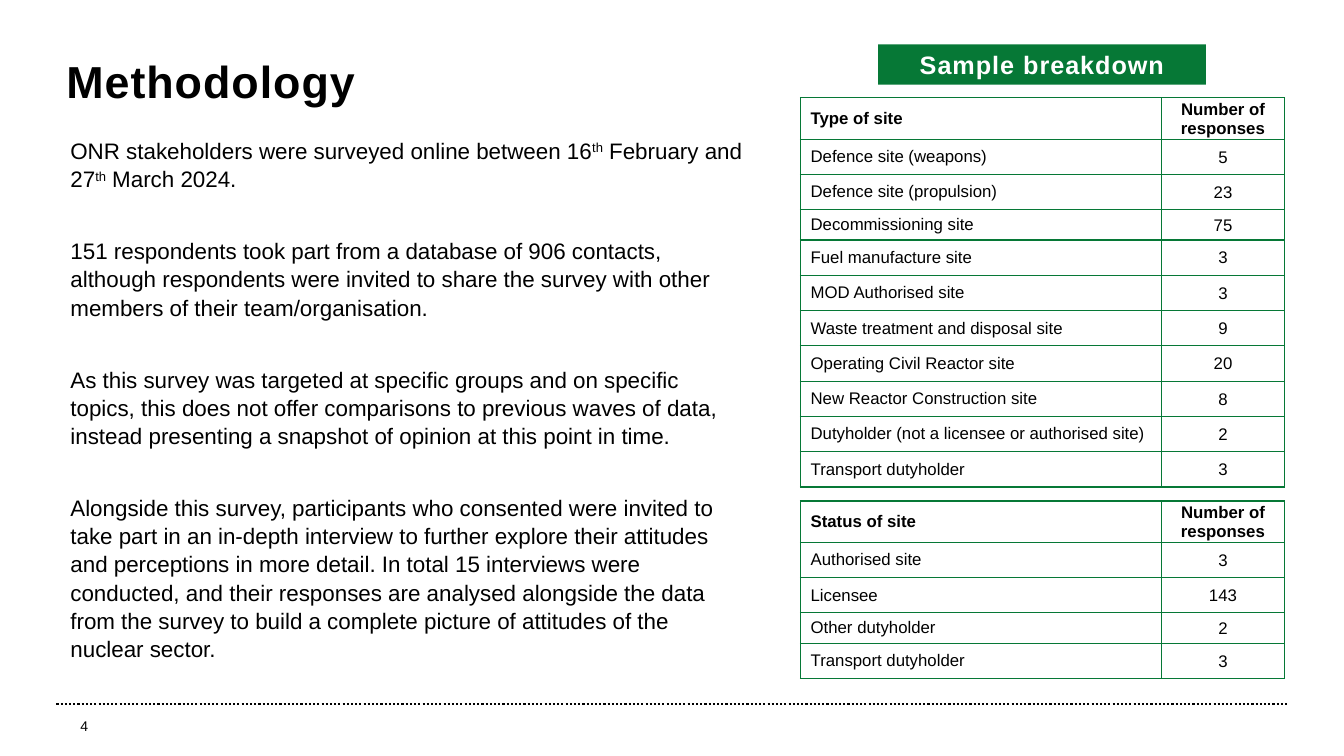
from lxml.etree import SubElement
from pptx import Presentation
from pptx.dml.color import RGBColor
from pptx.enum.dml import MSO_LINE
from pptx.enum.shapes import MSO_CONNECTOR, MSO_SHAPE
from pptx.enum.text import MSO_ANCHOR, PP_ALIGN
from pptx.oxml import parse_xml
from pptx.oxml.ns import nsdecls, qn
from pptx.util import Inches, Pt

GREEN, BLACK, WHITE = "067836", "000000", "FFFFFF"


def rgb(hex_value):
    return RGBColor.from_string(hex_value)


def add_run(paragraph, text, size, color=BLACK, bold=False, **attributes):
    """Append a formatted Arial run; attributes go onto its a:rPr element."""
    run = paragraph.add_run()
    run.text = text
    font_format = {"name": "Arial", "size": Pt(size), "bold": bold}
    for key, value in font_format.items():
        setattr(run.font, key, value)
    run.font.color.rgb = rgb(color)
    for key, value in attributes.items():
        run.font._element.set(key, value)


presentation = Presentation()
presentation.slide_width = Inches(13.33)
presentation.slide_height = Inches(7.5)
slide = presentation.slides.add_slide(presentation.slide_layouts[6])
shapes = slide.shapes

# Footer rule
footer_rule = shapes.add_connector(
    MSO_CONNECTOR.STRAIGHT, Inches(0.56), Inches(6.98), Inches(12.77), Inches(6.98))
footer_rule.line.color.rgb = rgb(BLACK)
footer_rule.line.width = Pt(1.5)
footer_rule.line.dash_style = MSO_LINE.ROUND_DOT
SubElement(footer_rule._element.spPr, qn("a:effectLst"))

# Title
title = shapes.add_textbox(Inches(0.56), Inches(0.43), Inches(8), Inches(0.74)).text_frame
title.word_wrap = True
title.vertical_anchor = MSO_ANCHOR.MIDDLE
add_run(title.paragraphs[0], "Methodology", 32, bold=True, spc="70")

# Method description: odd-numbered pieces of a paragraph are superscript
method_paragraphs = [
    ["ONR stakeholders were surveyed online between 16", "th", " February and 27", "th",
     " March 2024."],
    ["151 respondents took part from a database of 906 contacts, although respondents "
     "were invited to share the survey with other members of their team/organisation."],
    ["As this survey was targeted at specific groups and on specific topics, this does not "
     "offer comparisons to previous waves of data, instead presenting a snapshot of "
     "opinion at this point in time."],
    ["Alongside this survey, participants who consented were invited to take part in an "
     "in-depth interview to further explore their attitudes and perceptions in more detail. "
     "In total 15 interviews were conducted, and their responses are analysed alongside the "
     "data from the survey to build a complete picture of attitudes of the nuclear sector."],
]
method = shapes.add_textbox(Inches(0.6), Inches(1.3), Inches(6.88), Inches(5.27)).text_frame
method.word_wrap = True
for number, pieces in enumerate(method_paragraphs):
    paragraph = method.add_paragraph() if number else method.paragraphs[0]
    paragraph.line_spacing = 1.05
    paragraph.space_after = Pt(31.3)
    for position, piece in enumerate(pieces):
        add_run(paragraph, piece, 16, baseline="30000" if position % 2 else "0")

# Heading above the tables
sample_heading = shapes.add_shape(
    MSO_SHAPE.RECTANGLE, Inches(8.71), Inches(0.44), Inches(3.25), Inches(0.4))
sample_heading.shadow.inherit = False
sample_heading.fill.solid()
sample_heading.fill.fore_color.rgb = rgb(GREEN)
sample_heading.line.fill.background()
sample_heading.text_frame.vertical_anchor = MSO_ANCHOR.MIDDLE
sample_heading.text_frame.paragraphs[0].alignment = PP_ALIGN.CENTER
add_run(sample_heading.text_frame.paragraphs[0], "Sample breakdown", 18, WHITE, True, spc="70")

# Sample tables: top edge, index of the shorter row, rows
sample_tables = [
    (0.97, 3, [
        ("Type of site", "Number of responses"),
        ("Defence site (weapons)", "5"),
        ("Defence site (propulsion)", "23"),
        ("Decommissioning site", "75"),
        ("Fuel manufacture site", "3"),
        ("MOD Authorised site", "3"),
        ("Waste treatment and disposal site", "9"),
        ("Operating Civil Reactor site", "20"),
        ("New Reactor Construction site", "8"),
        ("Dutyholder (not a licensee or authorised site)", "2"),
        ("Transport dutyholder", "3"),
    ]),
    (4.97, 3, [
        ("Status of site", "Number of responses"),
        ("Authorised site", "3"),
        ("Licensee", "143"),
        ("Other dutyholder", "2"),
        ("Transport dutyholder", "3"),
    ]),
]
count_margins = {"margin_left": 0.01, "margin_right": 0.01, "margin_top": 0.01,
                 "margin_bottom": 0}
for top, short_row, records in sample_tables:
    heights = [0.35] * len(records)
    heights[0], heights[short_row] = 0.4, 0.3
    table = shapes.add_table(len(records), 2, Inches(7.94), Inches(top),
                             Inches(4.8), Inches(sum(heights))).table
    table.first_row = table.horz_banding = False
    table.columns[0].width, table.columns[1].width = Inches(3.58), Inches(1.22)
    for row, record in enumerate(records):
        table.rows[row].height = Inches(heights[row])
        for column, text in enumerate(record):
            cell = table.cell(row, column)
            cell.vertical_anchor = MSO_ANCHOR.MIDDLE
            cell.fill.background()
            cell_properties = cell._tc.get_or_add_tcPr()
            for index, side in enumerate("LRTB"):
                cell_properties.insert(index, parse_xml(
                    f'<a:ln{side} {nsdecls("a")} w="12700"><a:solidFill>'
                    f'<a:srgbClr val="{GREEN}"/></a:solidFill></a:ln{side}>'))
            paragraph = cell.text_frame.paragraphs[0]
            if column == 1:
                paragraph.alignment = PP_ALIGN.CENTER
                for margin, value in count_margins.items():
                    setattr(cell, margin, Inches(value))
            add_run(paragraph, text, 12, bold=row == 0)

# Page number
page_number = shapes.add_textbox(
    Inches(0.56), Inches(7.1), Inches(0.55), Inches(0.23)).text_frame
page_number.word_wrap = True
page_number.vertical_anchor = MSO_ANCHOR.MIDDLE
page_number.paragraphs[0].alignment = PP_ALIGN.CENTER
page_number.paragraphs[0].line_spacing = 0.9
add_run(page_number.paragraphs[0], "4", 10)

presentation.save("out.pptx")
